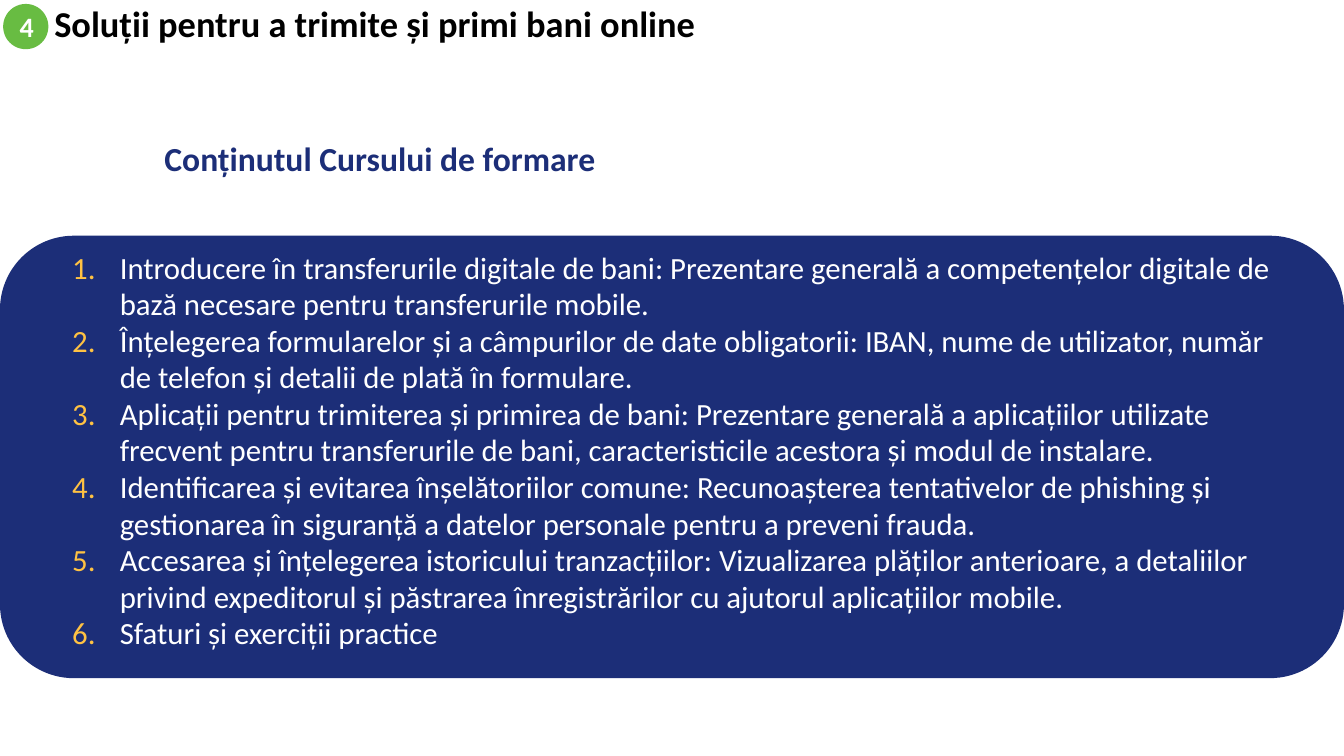
from lxml import etree
from pptx import Presentation
from pptx.dml.color import RGBColor
from pptx.enum.shapes import MSO_SHAPE
from pptx.enum.text import MSO_ANCHOR, MSO_AUTO_SIZE, PP_ALIGN
from pptx.oxml.ns import qn
from pptx.util import Cm, Pt

ROUND, OVAL = MSO_SHAPE.ROUNDED_RECTANGLE, MSO_SHAPE.OVAL
TOP, MIDDLE = MSO_ANCHOR.TOP, MSO_ANCHOR.MIDDLE
LEFT, CENTER = PP_ALIGN.LEFT, PP_ALIGN.CENTER
NAVY = RGBColor(0x1C, 0x2E, 0x78)
GREEN = RGBColor(0x68, 0xBC, 0x42)
GOLD = RGBColor(0xFF, 0xC2, 0x43)
WHITE = RGBColor(0xFF, 0xFF, 0xFF)
BLACK = RGBColor(0, 0, 0)

TOPICS = [
    "Introducere în transferurile digitale de bani: Prezentare generală a competențelor digitale de bază necesare pentru transferurile mobile.",
    "Înțelegerea formularelor și a câmpurilor de date obligatorii: IBAN, nume de utilizator, număr de telefon și detalii de plată în formulare.",
    "Aplicații pentru trimiterea și primirea de bani: Prezentare generală a aplicațiilor utilizate frecvent pentru transferurile de bani, caracteristicile acestora și modul de instalare.",
    "Identificarea și evitarea înșelătoriilor comune: Recunoașterea tentativelor de phishing și gestionarea în siguranță a datelor personale pentru a preveni frauda.",
    "Accesarea și înțelegerea istoricului tranzacțiilor: Vizualizarea plăților anterioare, a detaliilor privind expeditorul și păstrarea înregistrărilor cu ajutorul aplicațiilor mobile.",
    "Sfaturi și exerciții practice",
]


def write(shape, text, size, color, bold=True, align=LEFT, anchor=MIDDLE,
          space=1.0, mark=None):
    """Fill the shape with one paragraph per line, numbered if mark is a colour."""
    frame = shape.text_frame
    frame.text = text
    frame.word_wrap = True
    frame.auto_size = MSO_AUTO_SIZE.NONE
    frame.vertical_anchor = anchor
    for para in frame.paragraphs:
        para.alignment = align
        para.line_spacing = space
        if mark is not None:
            props = para._p.get_or_add_pPr()
            props.set("marL", str(Cm(1.27)))
            props.set("indent", str(-Cm(1.2)))
            tint = etree.SubElement(props, qn("a:buClr"))
            etree.SubElement(tint, qn("a:srgbClr"), val=str(mark))
            etree.SubElement(props, qn("a:buFont"), typeface="+mj-lt")
            etree.SubElement(props, qn("a:buAutoNum"), type="arabicPeriod")
        for run in para.runs:
            font = run.font
            font.name = "Calibri"
            font.size = Pt(size)
            font.bold = bold
            font.color.rgb = color


def draw(kind, left, top, width, height, fill):
    shape = slide.shapes.add_shape(kind, Cm(left), Cm(top), Cm(width), Cm(height))
    shape.shadow.inherit = False
    shape.fill.solid()
    shape.fill.fore_color.rgb = fill
    shape.line.fill.background()
    return shape


deck = Presentation()
deck.slide_width, deck.slide_height = Cm(33.87), Cm(19.05)
slide = deck.slides.add_slide(deck.slide_layouts[5])

panel = draw(ROUND, 0, 5.94, 33.87, 11.15, NAVY)
panel.adjustments[0] = 0.167

title = slide.shapes.title
title.left, title.top = Cm(3.89), Cm(3.18)
title.width, title.height = Cm(29.21), Cm(1.73)
write(title, "Conținutul Cursului de formare", 24, NAVY, space=0.9)

body = slide.shapes.add_textbox(Cm(1.5), Cm(6.17), Cm(30.58), Cm(10.52))
body.text_frame.margin_right = 0
write(body, "\n".join(TOPICS), 22, WHITE, bold=False, anchor=TOP,
      space=0.99, mark=GOLD)

badge = draw(OVAL, 0.08, 0.1, 1.14, 1.14, GREEN)
write(badge, "4", 20, WHITE, align=CENTER)

head = slide.shapes.add_textbox(Cm(1.12), Cm(0.1), Cm(20.32), Cm(1.14))
write(head, "Soluții pentru a trimite și primi bani online", 26, BLACK, space=0.8)

deck.save("out.pptx")
